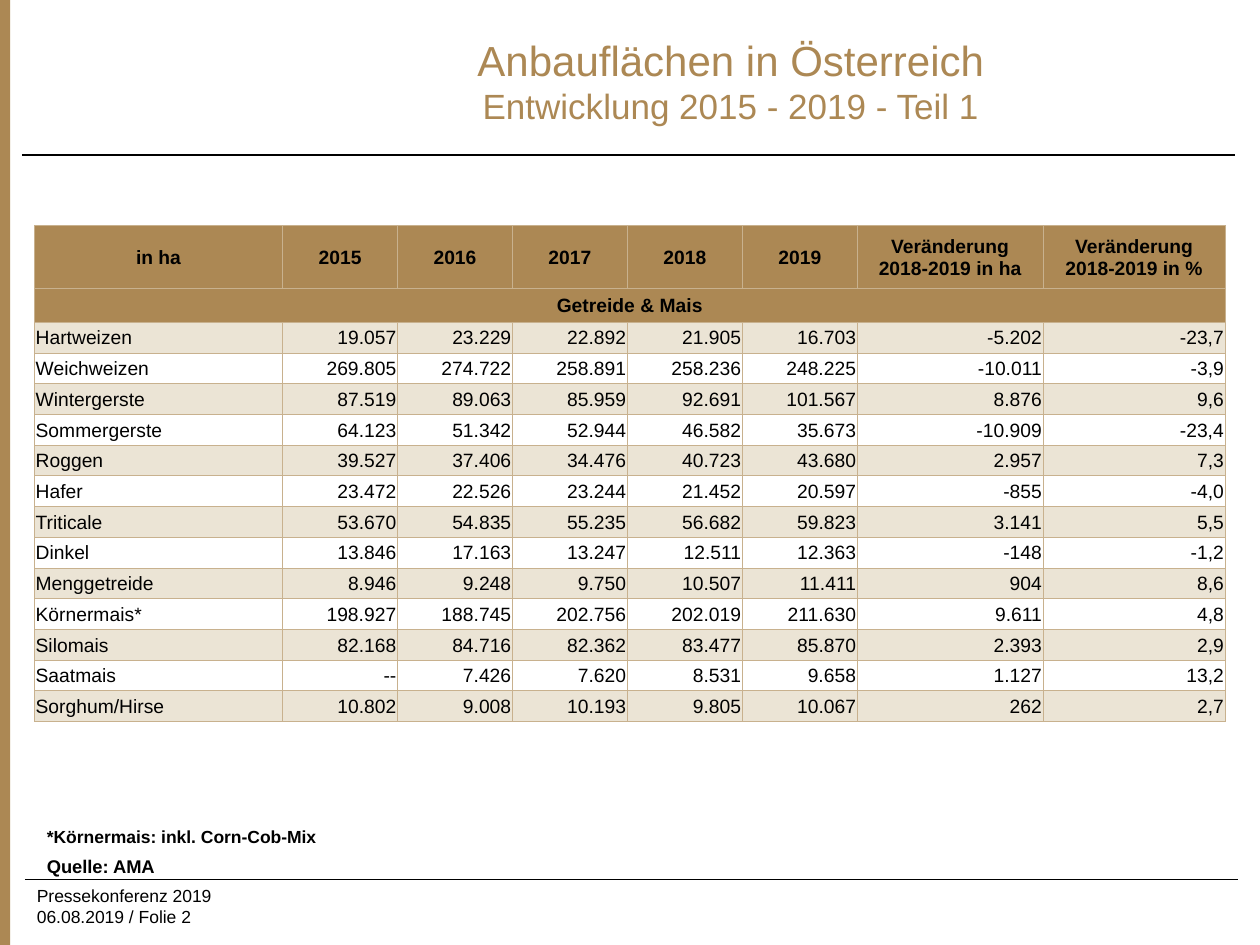
from dataclasses import dataclass

from lxml import etree
from pptx import Presentation
from pptx.dml.color import RGBColor
from pptx.enum.shapes import MSO_CONNECTOR, MSO_SHAPE
from pptx.enum.text import MSO_ANCHOR, PP_ALIGN
from pptx.oxml.ns import qn
from pptx.util import Pt

LEFT, CENTER, RIGHT = PP_ALIGN.LEFT, PP_ALIGN.CENTER, PP_ALIGN.RIGHT
MIDDLE = MSO_ANCHOR.MIDDLE
RECTANGLE = MSO_SHAPE.RECTANGLE
STRAIGHT = MSO_CONNECTOR.STRAIGHT

FONT = "Arial"
COLORS = {"gold": "AC8854", "sand": "EBE4D5", "border": "C8B18E", "black": "000000"}


@dataclass
class Rule:
    x1: float
    x2: float
    y: float


@dataclass
class Note:
    lines: list[str]
    left: float
    top: float
    width: float
    height: float
    size: float = 10
    bold: bool = False


RULES = [Rule(12.5, 705.7, 88.5), Rule(14.2, 707.5, 502.4)]

NOTES = [
    Note(["Pressekonferenz 2019", "06.08.2019 / Folie 2"], 14, 502, 238, 29),
    Note(["Quelle: AMA"], 19.7, 485.3, 680.5, 17.3, 10.5, True),
    Note(["*Körnermais: inkl. Corn-Cob-Mix"], 19.7, 468.5, 680.5, 17.3, 10, True),
]

HEADERS = ["in ha", "2015", "2016", "2017", "2018", "2019",
           "Veränderung\n2018-2019 in ha", "Veränderung\n2018-2019 in %"]
SECTION = "Getreide & Mais"
CROPS = [
    ("Hartweizen", "19.057", "23.229", "22.892", "21.905", "16.703", "-5.202", "-23,7"),
    ("Weichweizen", "269.805", "274.722", "258.891", "258.236", "248.225", "-10.011", "-3,9"),
    ("Wintergerste", "87.519", "89.063", "85.959", "92.691", "101.567", "8.876", "9,6"),
    ("Sommergerste", "64.123", "51.342", "52.944", "46.582", "35.673", "-10.909", "-23,4"),
    ("Roggen", "39.527", "37.406", "34.476", "40.723", "43.680", "2.957", "7,3"),
    ("Hafer", "23.472", "22.526", "23.244", "21.452", "20.597", "-855", "-4,0"),
    ("Triticale", "53.670", "54.835", "55.235", "56.682", "59.823", "3.141", "5,5"),
    ("Dinkel", "13.846", "17.163", "13.247", "12.511", "12.363", "-148", "-1,2"),
    ("Menggetreide", "8.946", "9.248", "9.750", "10.507", "11.411", "904", "8,6"),
    ("Körnermais*", "198.927", "188.745", "202.756", "202.019", "211.630", "9.611", "4,8"),
    ("Silomais", "82.168", "84.716", "82.362", "83.477", "85.870", "2.393", "2,9"),
    ("Saatmais", "--", "7.426", "7.620", "8.531", "9.658", "1.127", "13,2"),
    ("Sorghum/Hirse", "10.802", "9.008", "10.193", "9.805", "10.067", "262", "2,7"),
]
COL_WIDTHS = [141.8] + [65.7] * 5 + [106.2, 104]
ROW_HEIGHTS = [36, 19.3] + [17.56] * len(CROPS)


def rgb(name: str) -> RGBColor:
    return RGBColor.from_string(COLORS[name])


def add_run(p, text: str, size: float, color: str = "black", bold: bool = False) -> None:
    r = p.add_run()
    r.text = text
    r.font.name, r.font.size, r.font.bold = FONT, Pt(size), bold
    r.font.color.rgb = rgb(color)


def add_rule(slide, rule: Rule) -> None:
    line = slide.shapes.add_connector(STRAIGHT, Pt(rule.x1), Pt(rule.y), Pt(rule.x2), Pt(rule.y))
    line.line.color.rgb = rgb("black")
    line.line.width = Pt(0.75)
    etree.SubElement(line._element.spPr, qn("a:effectLst"))


def add_note(slide, note: Note) -> None:
    box = slide.shapes.add_textbox(Pt(note.left), Pt(note.top), Pt(note.width), Pt(note.height))
    tf = box.text_frame
    tf.word_wrap = True
    p = tf.paragraphs[0]
    for i, text in enumerate(note.lines):
        if i:
            p.add_line_break()
        add_run(p, text, note.size, bold=note.bold)


def add_borders(cell) -> None:
    tc_pr = cell._tc.get_or_add_tcPr()
    for i, side in enumerate(("lnL", "lnR", "lnT", "lnB")):
        ln = etree.Element(qn(f"a:{side}"), w=str(Pt(0.5)))
        fill = etree.SubElement(ln, qn("a:solidFill"))
        etree.SubElement(fill, qn("a:srgbClr"), val=COLORS["border"])
        tc_pr.insert(i, ln)  # borders precede the fill


def fill_cell(cell, text: str, align: PP_ALIGN, fill: str | None, bold: bool = False) -> None:
    cell.margin_left = cell.margin_right = cell.margin_top = Pt(0.7)
    cell.margin_bottom = Pt(0)
    cell.vertical_anchor = MIDDLE
    if fill:
        cell.fill.solid()
        cell.fill.fore_color.rgb = rgb(fill)
    else:
        cell.fill.background()
    add_borders(cell)
    tf = cell.text_frame
    for i, line in enumerate(text.split("\n")):
        p = tf.add_paragraph() if i else tf.paragraphs[0]
        p.alignment = align
        if line:
            add_run(p, line, 11, bold=bold)


def add_crop_table(slide) -> None:
    table = slide.shapes.add_table(len(ROW_HEIGHTS), len(COL_WIDTHS), Pt(19.7), Pt(128.9),
                                   Pt(sum(COL_WIDTHS)), Pt(sum(ROW_HEIGHTS))).table
    for column, width in zip(table.columns, COL_WIDTHS):
        column.width = Pt(width)
    for row, height in zip(table.rows, ROW_HEIGHTS):
        row.height = Pt(height)

    # Header and section rows
    section = [SECTION] + [""] * (len(HEADERS) - 1)
    for r, texts in enumerate((HEADERS, section)):
        for c, text in enumerate(texts):
            fill_cell(table.cell(r, c), text, CENTER, "gold", bold=True)
    table.cell(1, 0).merge(table.cell(1, len(HEADERS) - 1))

    # Crop rows, every other one shaded
    for i, crop in enumerate(CROPS):
        for c, text in enumerate(crop):
            fill_cell(table.cell(i + 2, c), text, RIGHT if c else LEFT,
                      None if i % 2 else "sand")


def main() -> None:
    prs = Presentation()
    prs.slide_width, prs.slide_height = Pt(720), Pt(540)
    slide = prs.slides.add_slide(prs.slide_layouts[5])

    # Side bar and rules
    bar = slide.shapes.add_shape(RECTANGLE, Pt(-0.7), Pt(0), Pt(6.5), Pt(540))
    bar.shadow.inherit = False
    bar.fill.solid()
    bar.fill.fore_color.rgb = rgb("gold")
    bar.line.fill.background()
    for rule in RULES:
        add_rule(slide, rule)

    # Title
    title = slide.shapes.title
    title.left, title.top, title.width, title.height = Pt(133.2), Pt(9.4), Pt(568.8), Pt(73.4)
    tf = title.text_frame
    tf.vertical_anchor = MIDDLE
    p = tf.paragraphs[0]
    p.alignment = CENTER
    add_run(p, "Anbauflächen in Österreich", 24, "gold")
    p.add_line_break()
    add_run(p, "Entwicklung 2015 - 2019 - Teil 1", 20, "gold")

    # Footer, notes and table
    for note in NOTES:
        add_note(slide, note)
    add_crop_table(slide)

    prs.save("out.pptx")


if __name__ == "__main__":
    main()
